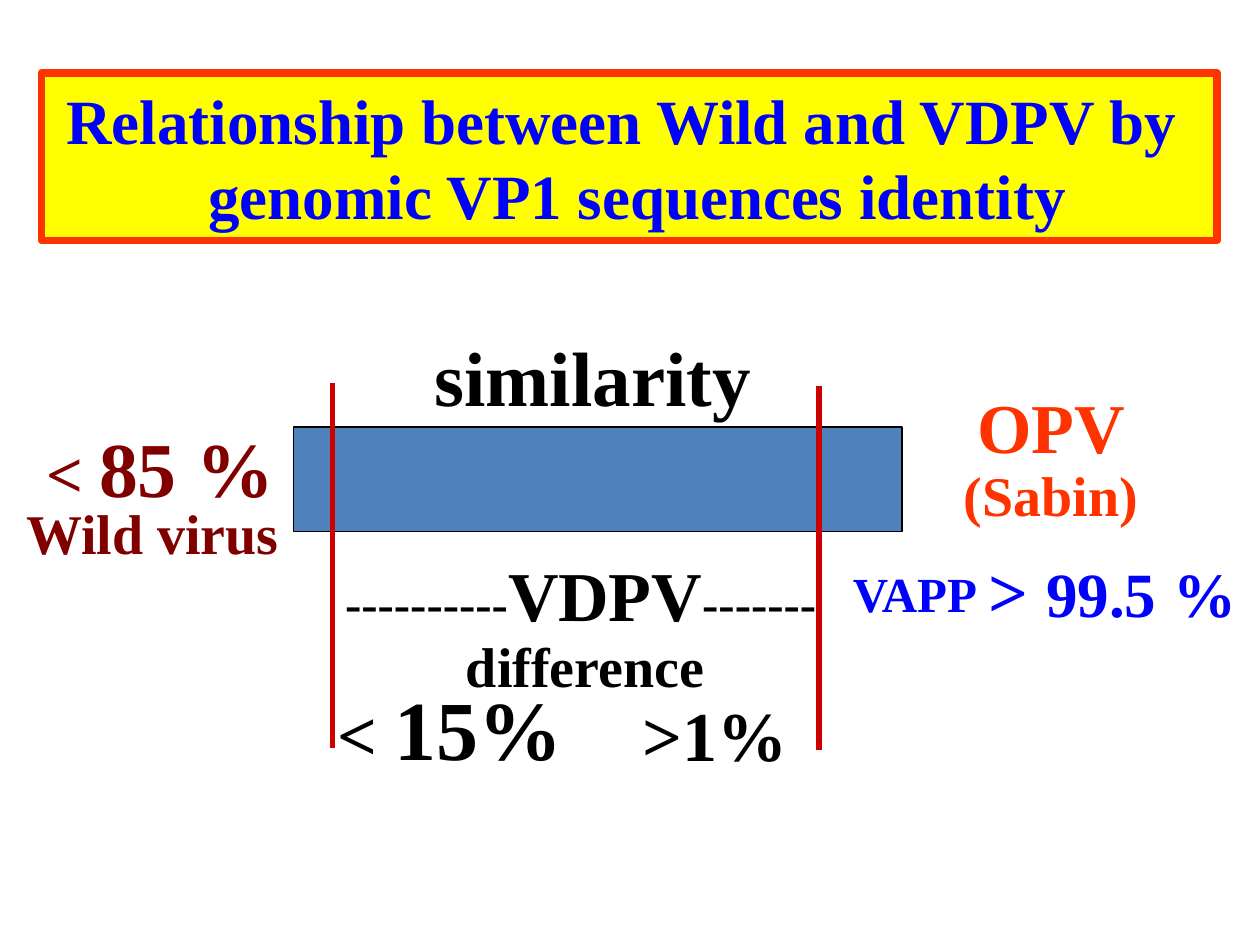
from lxml.etree import SubElement
from pptx import Presentation
from pptx.dml.color import RGBColor
from pptx.enum.shapes import MSO_CONNECTOR, MSO_SHAPE
from pptx.enum.text import MSO_ANCHOR, PP_ALIGN as Align
from pptx.oxml.ns import qn
from pptx.util import Inches, Pt

FONT = "Times New Roman"
COLORS = {
    "yellow": "FFFF00", "orange": "FF3300", "blue": "0000FF", "maroon": "800000",
    "black": "000000", "bar": "4F81BD", "limit": "CC0000",
}

# Content: box (left, top, width, height), alignment, color, paragraphs of (text, size)
TITLE = [[("Relationship between Wild and VDPV by \v genomic VP1 sequences identity", 36)]]
LABELS = [
    ((0.06, 3.28, 2.42, 0.75), Align.CENTER, "maroon", [[("< ", 37), ("85 %", 44.4)]]),
    ((0, 3.91, 2.42, 0.83), Align.CENTER, "maroon", [[("Wild virus", 32)]]),
    ((7.08, 3.07, 2.52, 1.46), Align.CENTER, "orange", [[("OPV", 40)], [("(Sabin)", 32)]]),
    ((7.75, 4.3, 2.42, 0.83), Align.LEFT, "blue",
     [[("> ", 40), ("99.5", 36), (" ", 40), ("%", 36)]]),
    ((6.67, 4.42, 2.75, 0.83), Align.LEFT, "blue", [[("VAPP", 28)]]),
    ((3.33, 2.57, 2.75, 0.83), Align.CENTER, "black", [[("similarity", 44)]]),
    ((2.64, 4.33, 6.75, 0.83), Align.LEFT, "black",
     [[("----------", 28), ("VDPV", 40), ("-------", 28)]]),
    ((3.27, 4.96, 2.75, 0.83), Align.CENTER, "black", [[("difference", 32)]]),
    ((2.58, 5.32, 2.42, 0.83), Align.LEFT, "black", [[("< ", 40), ("15%", 48)]]),
    ((5, 5.44, 1.55, 0.83), Align.LEFT, "black", [[(">1%", 40)]]),
]
LIMITS = [(2.64, 3.04, 5.94), (6.5, 3.06, 5.95)]  # x, top, bottom


def rgb(name):
    return RGBColor.from_string(COLORS[name])


def write(frame, paragraphs, align, color, spacing=None):
    frame.word_wrap = True
    for index, spans in enumerate(paragraphs):
        para = frame.add_paragraph() if index else frame.paragraphs[0]
        para.alignment = align
        para.line_spacing = spacing
        for text, size in spans:
            before = len(para.runs)
            if "\v" in text:
                para.text = text
            else:
                para.add_run().text = text
            for span in para.runs[before:]:
                span.font.name = FONT
                span.font.size = Pt(size)
                span.font.bold = True
                span.font.color.rgb = rgb(color)


def add_box(page, place, fill, line, width):
    box = page.shapes.add_shape(MSO_SHAPE.RECTANGLE, *map(Inches, place))
    box.shadow.inherit = False
    box.fill.solid()
    box.fill.fore_color.rgb = rgb(fill)
    box.line.color.rgb = rgb(line)
    box.line.width = Pt(width)
    return box


def add_limit(page, x, top, bottom):
    line = page.shapes.add_connector(
        MSO_CONNECTOR.STRAIGHT, Inches(x), Inches(top), Inches(x), Inches(bottom))
    line.line.color.rgb = rgb("limit")
    line.line.width = Pt(3)
    SubElement(line._element.spPr, qn("a:effectLst"))


deck = Presentation()
deck.slide_width, deck.slide_height = Inches(10), Inches(7.5)
page = deck.slides.add_slide(deck.slide_layouts[6])

# Title panel
title = add_box(page, (0.33, 0.58, 9.33, 1.33), "yellow", "orange", 4.5)
title.text_frame.vertical_anchor = MSO_ANCHOR.MIDDLE
write(title.text_frame, TITLE, Align.CENTER, "blue")

# Similarity bar
add_box(page, (2.33, 3.39, 4.83, 0.83), "bar", "black", 0.75)

# Labels; stacked ones are set tighter
for place, align, color, paragraphs in LABELS:
    label = page.shapes.add_textbox(*map(Inches, place))
    write(label.text_frame, paragraphs, align, color, 0.9 if len(paragraphs) > 1 else None)

# Limits of the VDPV range
for limit in LIMITS:
    add_limit(page, *limit)

deck.save("out.pptx")
